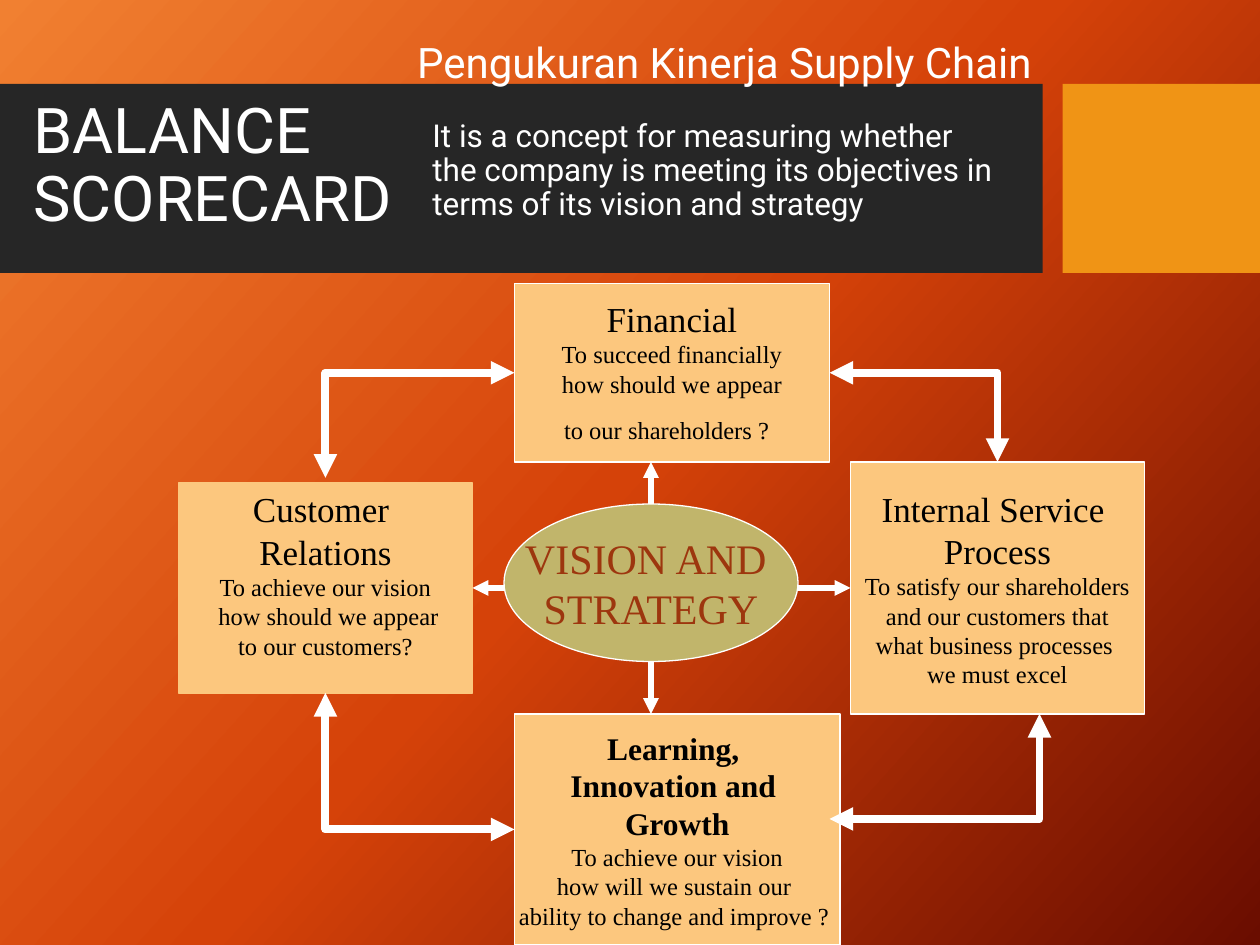
from copy import deepcopy
from dataclasses import dataclass

from lxml import etree
from pptx import Presentation, util as u
from pptx.dml.color import RGBColor
from pptx.enum import shapes, text
from pptx.oxml.ns import qn

COLUMNS, ROWS = 120, 90  # grid cells across and down the slide
COLORS = {
    "white": "FFFFFF", "black": "000000", "band": "262626", "accent": "F09415",
    "box": "FCC77E", "oval": "C1B56B", "vision": "9D360E",
}
BACKGROUND = {0: "F18031", 0.5: "D54209", 1: "6A0D00"}
SANS, SERIF = "Roboto", "Times New Roman"


@dataclass
class Area:
    """A place on the grid, in columns and rows."""
    left: float
    top: float
    width: float
    height: float


@dataclass
class Perspective:
    """A box of the scorecard: heading lines, then question lines."""
    area: Area
    heading: list[str]
    question: list[str]
    heading_size: int = 20
    bold: bool = False
    outline: str = "white"
    bottom_inset: float = 0.05
    tail_size: int = 0  # size of a taller space closing the last line


@dataclass
class Arrow:
    start: tuple[float, float]
    end: tuple[float, float]
    target: str = ""
    site: int = 0


PERSPECTIVES = {
    "financial": Perspective(
        Area(49, 27, 30, 17), ["Financial"],
        ["To succeed financially", "how should we appear", "to our shareholders ?"],
        tail_size=24),
    "customer": Perspective(
        Area(17, 46, 28, 20), ["Customer ", "Relations"],
        ["To achieve our vision", " how should we appear", "to our customers?"],
        outline="box", bottom_inset=0.27),
    "learning": Perspective(
        Area(49, 68, 31, 22), ["Learning, ", "Innovation and ", "Growth"],
        ["To achieve our vision", "how will we sustain our ",
         "ability to change and improve ? "],
        heading_size=18, bold=True),
    "process": Perspective(
        Area(81, 44, 28, 24), ["Internal Service ", "Process"],
        ["To satisfy our shareholders", "and our customers that",
         "what business processes ", "we must excel"]),
}
VISION = Area(48, 48, 28, 15)
CYCLE = [
    Arrow((49, 35.5), (31, 45.5)), Arrow((49, 79), (31, 66)),
    Arrow((79, 78), (99, 68)), Arrow((79, 35.5), (95, 44)),
]
SPOKES = [
    Arrow((62, 48), (62, 44)), Arrow((48, 56), (45, 56), "customer", 3),
    Arrow((62, 63), (62, 68)), Arrow((76, 56), (81, 56), "process", 1),
]

prs = Presentation()
prs.slide_width, prs.slide_height = u.Inches(10), u.Inches(7.5)
slide = prs.slides.add_slide(prs.slide_layouts[5])


def rgb(name: str) -> RGBColor:
    return RGBColor.from_string(COLORS[name])


def x(column: float) -> int:
    return round(prs.slide_width * column / COLUMNS)


def y(row: float) -> int:
    return round(prs.slide_height * row / ROWS)


def bounds(area: Area) -> tuple[int, int, int, int]:
    return x(area.left), y(area.top), x(area.width), y(area.height)


def set_all(target, values: dict) -> None:
    for name, value in values.items():
        setattr(target, name, value)


def style(font, size: int, face: str, color: str, bold: bool = False) -> None:
    set_all(font, {"size": u.Pt(size), "name": face, "bold": bold})
    font.color.rgb = rgb(color)


def paint_background() -> None:
    fill = slide.background.fill
    fill.gradient()
    fill.gradient_angle = 318
    stop_list = slide.element.find(".//" + qn("a:gsLst"))
    stop_list.insert(1, deepcopy(stop_list[0]))
    for stop, (position, color) in zip(fill.gradient_stops, BACKGROUND.items()):
        stop.position = position
        stop.color.rgb = RGBColor.from_string(color)


def add_filled(kind, area: Area, fill: str, outline: str = ""):
    shape = slide.shapes.add_shape(kind, *bounds(area))
    shape.shadow.inherit = False
    shape.fill.solid()
    shape.fill.fore_color.rgb = rgb(fill)
    if outline:
        shape.line.color.rgb = rgb(outline)
        shape.line.width = u.Pt(0.75)
    else:
        shape.line.fill.background()
    return shape


def write_lines(frame, lines: list[tuple[str, int, bool]], color: str) -> None:
    """Write centred serif lines, each given as wording, size and boldness."""
    set_all(frame, {"word_wrap": False, "vertical_anchor": text.MSO_ANCHOR.MIDDLE})
    for number, (wording, size, bold) in enumerate(lines):
        paragraph = frame.add_paragraph() if number else frame.paragraphs[0]
        paragraph.alignment = text.PP_ALIGN.CENTER
        run = paragraph.add_run()
        run.text = wording
        style(run.font, size, SERIF, color, bold)


def add_perspective(item: Perspective):
    box = add_filled(shapes.MSO_SHAPE.RECTANGLE, item.area, "box", item.outline)
    frame = box.text_frame
    frame.margin_bottom = u.Inches(item.bottom_inset)
    lines = [(line, item.heading_size, item.bold) for line in item.heading]
    lines += [(line, 14, False) for line in item.question]
    write_lines(frame, lines, "black")
    if item.tail_size:
        tail = frame.paragraphs[-1].add_run()
        tail.text = " "
        style(tail.font, item.tail_size, SERIF, "black")
    return box


def add_arrow(arrow: Arrow, kind, width: float, ends: list[str]):
    line = slide.shapes.add_connector(
        kind, x(arrow.start[0]), y(arrow.start[1]), x(arrow.end[0]), y(arrow.end[1]))
    line.line.color.rgb = rgb("white")
    line.line.width = u.Pt(width)
    properties = line.element.spPr
    for end in ends:
        etree.SubElement(properties.find(qn("a:ln")), qn("a:" + end), type="triangle")
    etree.SubElement(properties, qn("a:effectLst"))
    return line


def add_elbow(arrow: Arrow) -> None:
    """Run sideways first, then up or down, with a single corner."""
    line = add_arrow(arrow, shapes.MSO_CONNECTOR.ELBOW, 4.5, ["headEnd", "tailEnd"])
    line.element.spPr.find(qn("a:prstGeom")).set("prst", "bentConnector2")


def add_caption(area: Area, wording: str, size: int, **paragraph_format) -> None:
    frame = slide.shapes.add_textbox(*bounds(area)).text_frame
    frame.word_wrap = "alignment" not in paragraph_format
    paragraph = frame.paragraphs[0]
    paragraph.text = wording
    set_all(paragraph, paragraph_format)
    style(paragraph.runs[0].font, size, SANS, "white")


def set_title() -> None:
    title = slide.shapes.title
    set_all(title, dict(zip(("left", "top", "width", "height"),
                            bounds(Area(2, 8.8, 40.2, 14.2)))))
    set_all(title.text_frame, {"word_wrap": True, "auto_size": text.MSO_AUTO_SIZE.NONE,
                               "vertical_anchor": text.MSO_ANCHOR.MIDDLE})
    paragraph = title.text_frame.paragraphs[0]
    paragraph.text = "BALANCE \vSCORECARD"
    set_all(paragraph, {"alignment": text.PP_ALIGN.LEFT, "line_spacing": 0.9})
    for run in paragraph.runs:
        style(run.font, 36, SANS, "white")


paint_background()
for band_area, band_color in ((Area(0, 8, 99.3, 18), "band"),
                              (Area(101.2, 8, 18.8, 18), "accent")):
    band = add_filled(shapes.MSO_SHAPE.RECTANGLE, band_area, band_color)
    slide.shapes.title.element.addprevious(band.element)
set_title()
add_caption(Area(38, 2.9, 62, 6), "Pengukuran Kinerja Supply Chain", 24,
            alignment=text.PP_ALIGN.CENTER)
add_caption(Area(40, 10.9, 56.3, 11),
            "It is a concept for measuring whether the company is meeting its "
            "objectives in terms of its vision and strategy", 18, line_spacing=0.9)

boxes = {name: add_perspective(item) for name, item in PERSPECTIVES.items()}
vision = add_filled(shapes.MSO_SHAPE.OVAL, VISION, "oval", "white")
write_lines(vision.text_frame,
            [("VISION AND ", 24, False), ("STRATEGY", 24, False)], "vision")
for link in CYCLE:
    add_elbow(link)
for spoke in SPOKES:
    pointer = add_arrow(spoke, shapes.MSO_CONNECTOR.STRAIGHT, 3, ["tailEnd"])
    if spoke.target:
        pointer.end_connect(boxes[spoke.target], spoke.site)
prs.save("out.pptx")
